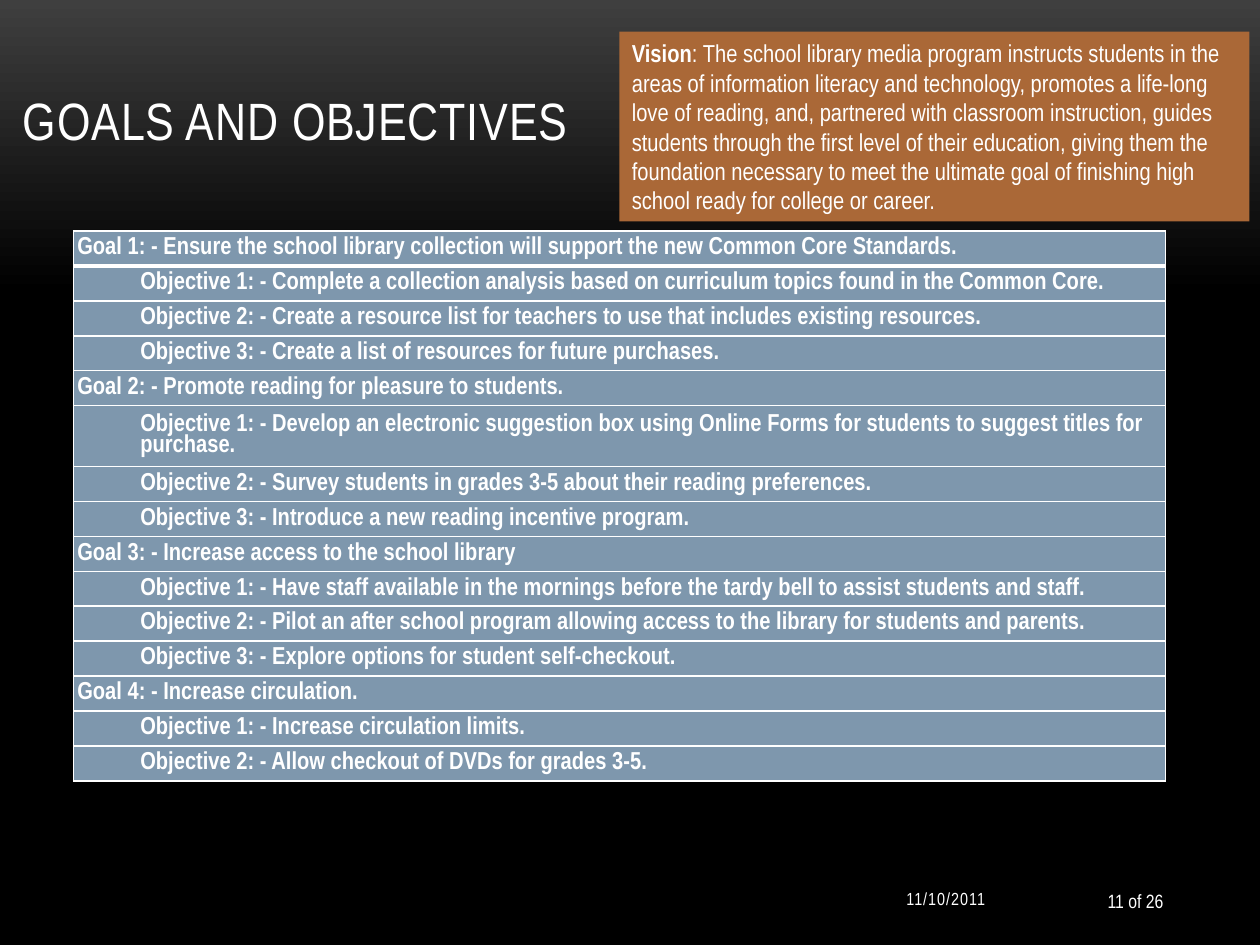
from lxml.etree import SubElement
from pptx import Presentation
from pptx.dml.color import RGBColor
from pptx.enum.shapes import MSO_SHAPE
from pptx.enum.text import MSO_ANCHOR, MSO_AUTO_SIZE, PP_ALIGN
from pptx.oxml import parse_xml
from pptx.oxml.ns import nsdecls, qn
from pptx.util import Inches, Pt

COLORS = {"white": "FFFFFF", "rust": "AA6837", "steel": "7E97AD",
          "charcoal": "3F3F3F", "black": "000000"}
FONT = "Arial Narrow"
UNIT = Inches(10) // 120  # the slide is a grid of 120 columns and 90 rows

GOALS = [
    ("Ensure the school library collection will support the new Common Core Standards.", [
        "Complete a collection analysis based on curriculum topics found in the Common Core.",
        "Create a resource list for teachers to use that includes existing resources.",
        "Create a list of resources for future purchases."]),
    ("Promote reading for pleasure to students.", [
        "Develop an electronic suggestion box using Online Forms for students to suggest "
        "titles for purchase.",
        "Survey students in grades 3-5 about their reading preferences.",
        "Introduce a new reading incentive program."]),
    ("Increase access to the school library", [
        "Have staff available in the mornings before the tardy bell to assist students and staff.",
        "Pilot an after school program allowing access to the library for students and parents.",
        "Explore options for student self-checkout."]),
    ("Increase circulation.", [
        "Increase circulation limits.",
        "Allow checkout of DVDs for grades 3-5."]),
]
VISION = (": The school library media program instructs students in the areas of information "
          "literacy and technology, promotes a life-long love of reading, and, partnered with "
          "classroom instruction, guides students through the first level of their education, "
          "giving them the foundation necessary to meet the ultimate goal of finishing high "
          "school ready for college or career.")


def color(name):
    return RGBColor.from_string(COLORS[name])


def grid(*cells):
    return [round(cell * UNIT) for cell in cells]


def set_all(target, **values):
    for name, value in values.items():
        setattr(target, name, value)


def add_span(para, text, size, bold=False, spacing=0):
    span = para.add_run()
    span.text = text
    set_all(span.font, name=FONT, size=Pt(size), bold=bold)
    span.font.color.rgb = color("white")
    if spacing:
        span.font._element.set("spc", str(round(spacing * 100)))


def add_label(page, box, text, size, anchor, align, spacing=0):
    frame = page.shapes.add_textbox(*grid(*box)).text_frame
    set_all(frame, word_wrap=True, vertical_anchor=anchor)
    para = frame.paragraphs[0]
    para.alignment = align
    add_span(para, text, size, spacing=spacing)


def paint_background(page):
    fill = page.background.fill
    fill.gradient()
    fill.gradient_angle = 270
    for stop, name, position in zip(fill.gradient_stops, ("charcoal", "black"), (0, 0.31)):
        stop.color.rgb = color(name)
        stop.position = position


def add_vision(page, box):
    panel = page.shapes.add_shape(MSO_SHAPE.RECTANGLE, *grid(*box))
    panel.shadow.inherit = False
    panel.fill.solid()
    panel.fill.fore_color.rgb = color("rust")
    panel.line.fill.background()
    frame = panel.text_frame
    set_all(frame, word_wrap=True, vertical_anchor=MSO_ANCHOR.MIDDLE,
            auto_size=MSO_AUTO_SIZE.SHAPE_TO_FIT_TEXT)
    para = frame.paragraphs[0]
    para.alignment = PP_ALIGN.LEFT
    add_span(para, "Vision", 14, bold=True)
    add_span(para, VISION, 14)


def add_borders(cell, widths):
    # Border lines come before the fill in the cell properties
    props = cell._tc.get_or_add_tcPr()
    for index, (side, width) in enumerate(widths.items()):
        line = parse_xml(f'<a:ln{side} {nsdecls("a")} w="{Pt(width)}"/>')
        fill = SubElement(line, qn("a:solidFill"))
        SubElement(fill, qn("a:srgbClr")).set("val", COLORS["white"])
        props.insert(index, line)


def list_rows():
    for number, (goal, objectives) in enumerate(GOALS, 1):
        yield 0, f"Goal {number}: - {goal}"
        for step, objective in enumerate(objectives, 1):
            yield 1, f"Objective {step}: - {objective}"


def add_goals(page, box, row_height, tall_height):
    rows = list(list_rows())
    table = page.shapes.add_table(len(rows), 1, *grid(*box)).table
    for index, (level, text) in enumerate(rows):
        # Text of more than 105 characters takes two lines
        table.rows[index].height = grid(tall_height if len(text) > 105 else row_height)[0]
        cell = table.cell(index, 0)
        margin = Inches(0.03)
        set_all(cell, vertical_anchor=MSO_ANCHOR.MIDDLE, margin_left=margin,
                margin_right=margin, margin_top=margin, margin_bottom=margin)
        cell.fill.solid()
        cell.fill.fore_color.rgb = color("steel")
        add_borders(cell, {"L": 1, "R": 1, "T": 3 if index == 1 else 1,
                           "B": 3 if index == 0 else 1})
        para = cell.text_frame.paragraphs[0]
        set_all(para, level=level, line_spacing=0.9)
        props = para._p.get_or_add_pPr()
        props.set("marL", str(level * Inches(0.5)))
        props.set("indent", "0")
        add_span(para, text, 14, bold=True)


def add_footer(page, top):
    add_label(page, (99, top + 0.2, 13, 4.8), "11 of 26", 11, MSO_ANCHOR.MIDDLE, PP_ALIGN.RIGHT)
    add_label(page, (75, top, 20, 4.8), "11/10/2011", 10, MSO_ANCHOR.MIDDLE, PP_ALIGN.RIGHT, 0.6)


def main():
    deck = Presentation()
    set_all(deck, slide_width=120 * UNIT, slide_height=90 * UNIT)
    page = deck.slides.add_slide(deck.slide_layouts[6])
    paint_background(page)
    add_label(page, (1, 0, 92, 15), "GOALS AND OBJECTIVES", 30,
              MSO_ANCHOR.BOTTOM, PP_ALIGN.LEFT, 0.5)
    add_goals(page, (7, 22, 104, 52.4), 3.33, 5.8)
    add_vision(page, (59, 3, 60, 18.1))
    add_footer(page, 83.2)
    deck.save("out.pptx")


if __name__ == "__main__":
    main()
